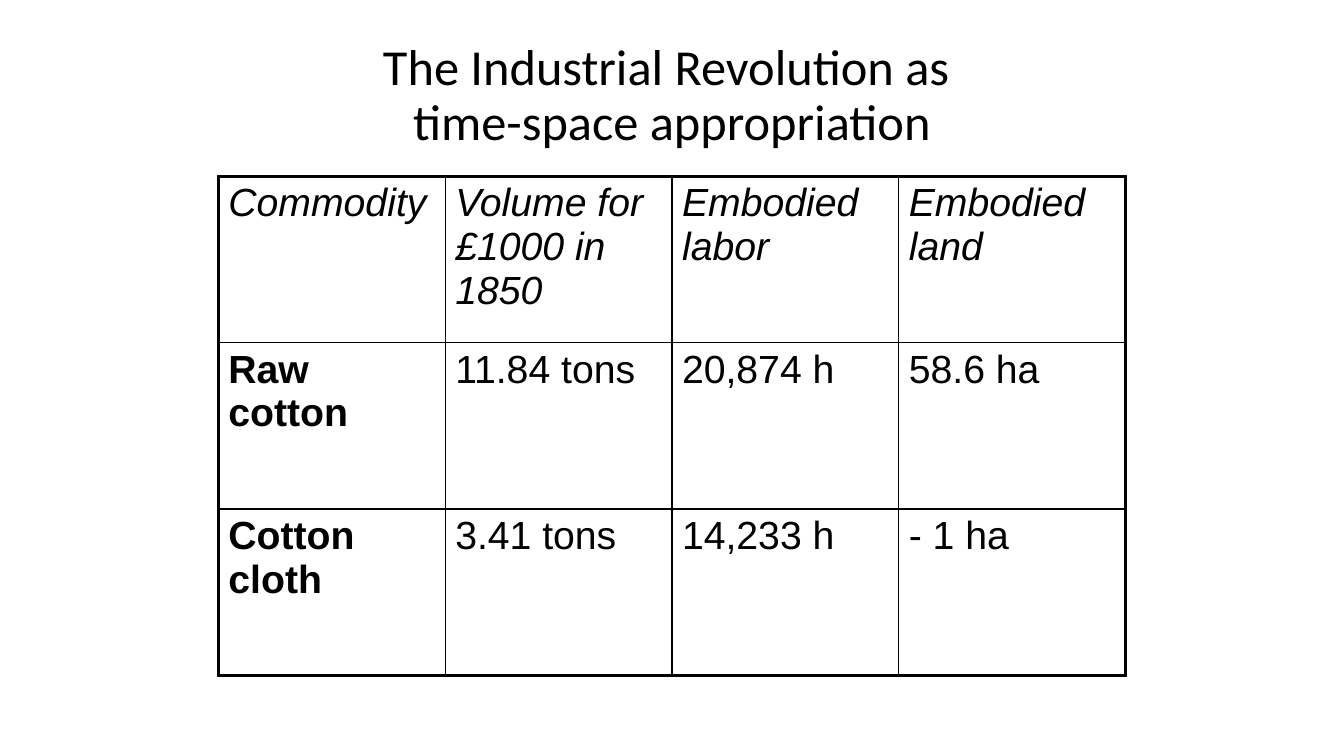
from lxml import etree
from pptx import Presentation
from pptx.dml.color import RGBColor
from pptx.enum.text import MSO_ANCHOR, PP_ALIGN
from pptx.oxml.ns import qn
from pptx.util import Pt

CENTER, MIDDLE, TOP = PP_ALIGN.CENTER, MSO_ANCHOR.MIDDLE, MSO_ANCHOR.TOP
COLORS = {"text": "000000", "border": "000000"}
THIN, THICK = 1, 2.25

TITLE_FONT = {"name": "Calibri", "size": Pt(36)}
CELL_FONT = {"name": "Arial", "size": Pt(28), "bold": False, "italic": False}

ROWS = [
    ["Commodity", "Volume for £1000 in 1850", "Embodied labor", "Embodied land"],
    ["Raw cotton", "11.84 tons", "20,874 h", "58.6 ha"],
    ["Cotton cloth", "3.41 tons", "14,233 h", "- 1 ha"],
]


def format_font(font, values):
    for name, value in values.items():
        setattr(font, name, value)
    font.color.rgb = RGBColor.from_string(COLORS["text"])


def add_title(s, text, x, y, w, h):
    sp = s.shapes.title
    sp.left, sp.top, sp.width, sp.height = Pt(x), Pt(y), Pt(w), Pt(h)
    tf = sp.text_frame
    tf.text = text
    tf.vertical_anchor = MIDDLE
    p = tf.paragraphs[0]
    p.alignment = CENTER
    p.line_spacing = 0.9
    for r in p.runs:
        format_font(r.font, TITLE_FONT)


def set_border(cell, side, width):
    tc_pr = cell._tc.get_or_add_tcPr()
    ln = etree.SubElement(tc_pr, qn(f"a:ln{side}"), w=str(Pt(width)))
    fill = etree.SubElement(ln, qn("a:solidFill"))
    etree.SubElement(fill, qn("a:srgbClr"), val=COLORS["border"])


def add_commodity_table(s, rows, x, y, w, h):
    n_rows, n_cols = len(rows), len(rows[0])
    table = s.shapes.add_table(n_rows, n_cols, Pt(x), Pt(y), Pt(w), Pt(h)).table
    table.first_row = table.horz_banding = False
    for column in table.columns:
        column.width = Pt(w / n_cols)
    for row in table.rows:
        row.height = Pt(h / n_rows)

    for i, texts in enumerate(rows):
        for j, text in enumerate(texts):
            cell = table.cell(i, j)
            cell.text = text
            cell.vertical_anchor = TOP
            header = i == 0
            font = CELL_FONT | {"italic": header, "bold": j == 0 and not header}
            format_font(cell.text_frame.paragraphs[0].runs[0].font, font)
            outer = {"L": j == 0, "R": j == n_cols - 1,
                     "T": i == 0, "B": i == n_rows - 1}
            for side, is_outer in outer.items():
                set_border(cell, side, THICK if is_outer else THIN)
            cell.fill.background()


def main():
    prs = Presentation()
    prs.slide_width, prs.slide_height = Pt(960), Pt(540)
    s = prs.slides.add_slide(prs.slide_layouts[5])
    add_title(s, "The Industrial Revolution as \vtime-space appropriation",
              66, 28.8, 828, 80.6)
    add_commodity_table(s, ROWS, 156, 126, 648, 356.4)
    prs.save("out.pptx")


if __name__ == "__main__":
    main()
